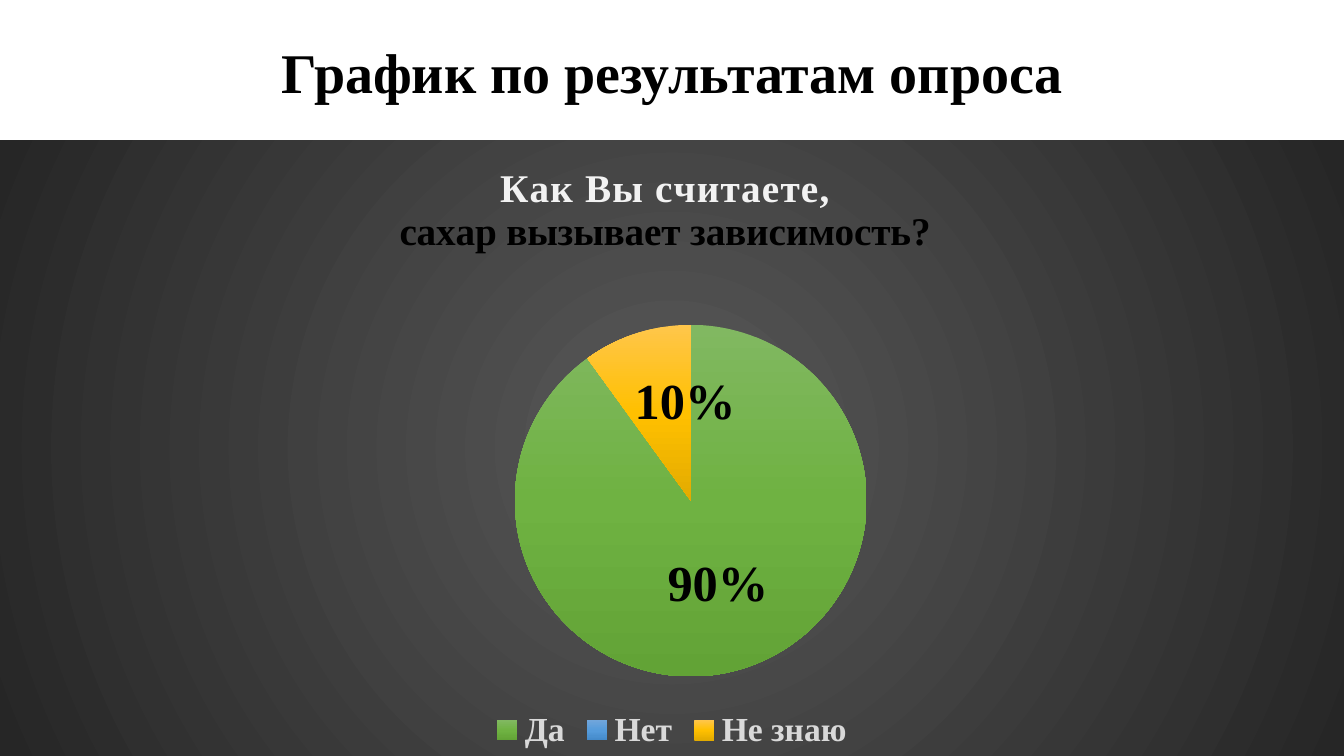
from copy import deepcopy
from dataclasses import dataclass

from lxml.etree import QName
from pptx import Presentation
from pptx.chart.data import CategoryChartData
from pptx.dml.color import RGBColor
from pptx.enum.chart import XL_CHART_TYPE, XL_LABEL_POSITION, XL_LEGEND_POSITION
from pptx.enum.text import MSO_ANCHOR, PP_ALIGN
from pptx.oxml import parse_xml
from pptx.oxml.ns import nsdecls, qn
from pptx.util import Inches, Pt


@dataclass(frozen=True)
class Theme:
    font: str = "Times New Roman"
    base_font: str = "Calibri"
    black: str = "000000"
    question: str = "F2F2F2"
    legend: str = "D9D9D9"
    backdrop: tuple = ("595959", "262626")
    heading_size: int = 40
    label_size: int = 36
    question_size: int = 28
    legend_size: int = 24
    base_size: int = 10


@dataclass(frozen=True)
class Answer:
    name: str
    percent: int
    colors: tuple


THEME = Theme()
ANSWERS = [
    Answer("Да", 90, ("81B861", "6FB242", "62A336")),
    Answer("Нет", 0, ("71A6DB", "559BDB", "448ACA")),
    Answer("Не знаю", 10, ("FFC64B", "FFC000", "E3AB00")),
]
LINEAR = '<a:lin ang="5400000" scaled="0"/>'
RADIAL = '<a:path path="circle"><a:fillToRect l="50000" t="50000" r="50000" b="50000"/></a:path>'


def style_font(font, size: int, color: str, bold: bool = True, name: str = THEME.font) -> None:
    font.name = name
    font.size = Pt(size)
    font.bold = bold
    font.color.rgb = RGBColor.from_string(color)


def write_line(paragraph, text: str, *, size: int, color: str, spacing: int = 0):
    run = paragraph.add_run()
    run.text = text
    style_font(run.font, size, color)
    paragraph.alignment = PP_ALIGN.CENTER
    if spacing:
        run.font._element.set("spc", str(spacing))


def gradient(colors: tuple, direction: str):
    """Gradient fill with evenly spaced stops."""
    step = 100000 // (len(colors) - 1)
    stops = "".join(
        f'<a:gs pos="{index * step}"><a:srgbClr val="{color}"/></a:gs>'
        for index, color in enumerate(colors)
    )
    return parse_xml(
        f'<a:gradFill {nsdecls("a")} rotWithShape="1"><a:gsLst>{stops}</a:gsLst>{direction}</a:gradFill>'
    )


def manual_layout(inner: bool = False, edge: bool = False, **fractions: float):
    """Chart part placed by fractions of the chart area."""
    target = '<c:layoutTarget val="inner"/>' if inner else ""
    modes = '<c:xMode val="edge"/><c:yMode val="edge"/>' if edge else ""
    values = "".join(f'<c:{key} val="{value}"/>' for key, value in fractions.items())
    return parse_xml(
        f'<c:layout {nsdecls("c")}><c:manualLayout>{target}{modes}{values}</c:manualLayout></c:layout>'
    )


def put_layout(parent, layout, position: int) -> None:
    for existing in parent.findall(qn("c:layout")):
        parent.remove(existing)
    parent.insert(position, layout)


def add_heading(slide, text: str) -> None:
    box = slide.shapes.add_textbox(Inches(0.92), Inches(0.02), Inches(11.5), Inches(1.45))
    frame = box.text_frame
    frame.word_wrap = True
    frame.vertical_anchor = MSO_ANCHOR.MIDDLE
    paragraph = frame.paragraphs[0]
    paragraph.line_spacing = 0.9
    write_line(paragraph, text, size=THEME.heading_size, color=THEME.black)


def format_labels(series) -> None:
    labels = series.data_labels
    labels.show_value = False
    labels.show_percentage = True
    labels.number_format = "0%"
    labels.number_format_is_linked = False
    labels.position = XL_LABEL_POSITION.CENTER
    style_font(labels.font, THEME.label_size, THEME.black)

    # The empty slice has no label; the last label is nudged aside
    element = labels._element
    hidden = parse_xml(f'<c:dLbl {nsdecls("c")}><c:idx val="1"/><c:delete val="1"/></c:dLbl>')
    moved = parse_xml(f'<c:dLbl {nsdecls("c")}><c:idx val="2"/></c:dLbl>')
    moved.append(manual_layout(x=0.016, y=-0.024))
    for child in element:
        if QName(child).localname != "showLeaderLines":
            moved.append(deepcopy(child))
    element.insert(0, hidden)
    element.insert(1, moved)


def add_survey_chart(slide) -> None:
    data = CategoryChartData()
    data.categories = [answer.name for answer in ANSWERS]
    data.add_series("Series 1", [answer.percent for answer in ANSWERS])
    chart = slide.shapes.add_chart(
        XL_CHART_TYPE.PIE, Inches(0), Inches(1.39), Inches(13.33), Inches(6.11), data
    ).chart
    style_font(chart.font, THEME.base_size, THEME.black, bold=False, name=THEME.base_font)

    # Dark backdrop
    backdrop = parse_xml(f'<c:spPr {nsdecls("c", "a")}><a:ln><a:noFill/></a:ln></c:spPr>')
    backdrop.insert(0, gradient(THEME.backdrop, RADIAL))
    chart._chartSpace.find(qn("c:txPr")).addprevious(backdrop)

    # Question
    chart.has_title = True
    frame = chart.chart_title.text_frame
    write_line(frame.paragraphs[0], "Как Вы считаете,",
               size=THEME.question_size, color=THEME.question, spacing=100)
    write_line(frame.add_paragraph(), "сахар вызывает зависимость?",
               size=THEME.question_size, color=THEME.black)
    put_layout(chart.chart_title._element, manual_layout(edge=True, x=0.295, y=0.037), 1)

    # Slices
    plot = chart.plots[0]
    plot.vary_by_categories = True
    series = plot.series[0]
    for index, answer in enumerate(ANSWERS):
        point = series._element.get_or_add_dPt_for_point(index)
        point.get_or_add_spPr().append(gradient(answer.colors, LINEAR))
    format_labels(series)
    plot_area = chart._chartSpace.chart.plotArea
    put_layout(plot_area, manual_layout(inner=True, edge=True, x=0.383, y=0.3, w=0.262, h=0.571), 0)

    # Legend
    chart.has_legend = True
    chart.legend.position = XL_LEGEND_POSITION.BOTTOM
    chart.legend.include_in_layout = False
    style_font(chart.legend.font, THEME.legend_size, THEME.legend)


def main() -> None:
    presentation = Presentation()
    presentation.slide_width = Inches(13.33)
    presentation.slide_height = Inches(7.5)
    slide = presentation.slides.add_slide(presentation.slide_layouts[6])
    add_survey_chart(slide)
    add_heading(slide, "График по результатам опроса")
    presentation.save("out.pptx")


if __name__ == "__main__":
    main()
